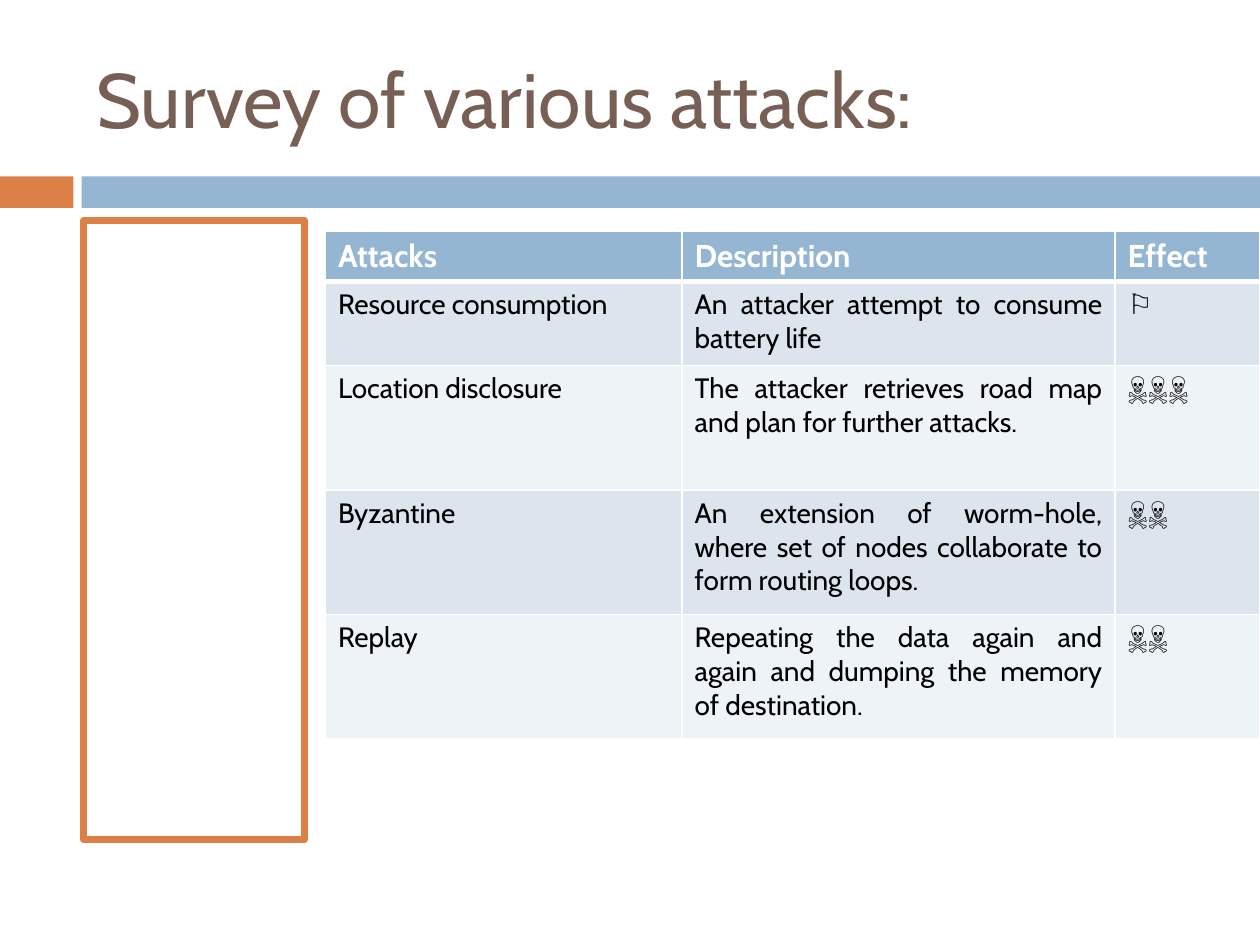
import pptx
import pptx.util
import pptx.dml.color
import pptx.enum.shapes
import pptx.enum.text
import pptx.oxml.ns
import lxml.etree

Pt = pptx.util.Pt
ALIGN = pptx.enum.text.PP_ALIGN
ANCHOR = pptx.enum.text.MSO_ANCHOR

COLORS = {
    "orange": "DD8047",
    "blue": "94B6D2",
    "brown": "775F55",
    "white": "FFFFFF",
    "black": "000000",
    "band_dark": "DCE5EE",
    "band_light": "EEF3F7",
}
TITLE_FORMAT = {"name": "Cabin", "size": Pt(44)}
HEADER_FORMAT = {"name": "Cabin", "size": Pt(18), "bold": True}
BODY_FORMAT = {"name": "Cabin", "size": Pt(16), "bold": False}

COLUMN_WIDTHS = [203.8, 247.4, 82.8]
ROW_HEIGHTS = [27.6, 48, 71.2, 71.2, 71.2]
ATTACKS = [
    ("Attacks", "Description", "Effect"),
    ("Resource consumption", "An attacker attempt to consume battery life", "⚐"),
    ("Location disclosure",
     "The attacker retrieves road map and plan for further attacks.", "☠☠☠"),
    ("Byzantine",
     "An extension of worm-hole, where set of nodes collaborate to form routing loops.",
     "☠☠"),
    ("Replay",
     "Repeating the data again and again and dumping the memory of destination.", "☠☠"),
]


def rgb(color):
    return pptx.dml.color.RGBColor.from_string(COLORS[color])


def write(frame, text, font_format, color, align=ALIGN.LEFT):
    paragraph = frame.paragraphs[0]
    paragraph.alignment = align
    run = paragraph.add_run()
    run.text = text
    for attribute, value in font_format.items():
        setattr(run.font, attribute, value)
    run.font.color.rgb = rgb(color)


def add_rectangle(slide, box, fill, line=None, line_width=0):
    rectangle = slide.shapes.add_shape(
        pptx.enum.shapes.MSO_SHAPE.RECTANGLE, *map(Pt, box))
    rectangle.shadow.inherit = False
    rectangle.fill.solid()
    rectangle.fill.fore_color.rgb = rgb(fill)
    if line:
        rectangle.line.color.rgb = rgb(line)
        rectangle.line.width = Pt(line_width)
    else:
        rectangle.line.fill.background()


def add_divider(slide, box):
    """Short orange block, a gap, then a blue bar to the right edge."""
    left, top, width, height = box
    block, gap = 42, 4.6
    add_rectangle(slide, (left, top, block, height), "orange")
    bar_left = left + block + gap
    add_rectangle(slide, (bar_left, top, left + width - bar_left, height), "blue")


def add_title(slide, box, text):
    title = slide.shapes.add_textbox(*map(Pt, box))
    title.text_frame.word_wrap = True
    title.text_frame.vertical_anchor = ANCHOR.MIDDLE
    write(title.text_frame, text, TITLE_FORMAT, "brown")


def set_borders(cell, widths):
    properties = cell._tc.get_or_add_tcPr()
    qn = pptx.oxml.ns.qn
    for side, width in widths.items():
        border = lxml.etree.SubElement(
            properties, qn(f"a:ln{side}"), w=str(Pt(width)))
        fill = lxml.etree.SubElement(border, qn("a:solidFill"))
        lxml.etree.SubElement(fill, qn("a:srgbClr"), val=COLORS["white"])


def add_attack_table(slide, box):
    table = slide.shapes.add_table(
        len(ROW_HEIGHTS), len(COLUMN_WIDTHS), *map(Pt, box)).table
    for column, width in zip(table.columns, COLUMN_WIDTHS):
        column.width = Pt(width)
    for row, height in zip(table.rows, ROW_HEIGHTS):
        row.height = Pt(height)

    for row_index, attack in enumerate(ATTACKS):
        header = row_index == 0
        band = "band_dark" if row_index % 2 else "band_light"
        for column_index, text in enumerate(attack):
            cell = table.cell(row_index, column_index)
            # Thick rule under the header, thin rules elsewhere
            set_borders(cell, {"L": 1, "R": 1,
                               "T": 3 if row_index == 1 else 1,
                               "B": 3 if header else 1})
            cell.fill.solid()
            cell.fill.fore_color.rgb = rgb("blue" if header else band)
            justified = column_index == 1 and not header
            write(cell.text_frame, text,
                  HEADER_FORMAT if header else BODY_FORMAT,
                  "white" if header else "black",
                  ALIGN.JUSTIFY if justified else ALIGN.LEFT)


def main():
    presentation = pptx.Presentation()
    presentation.slide_width, presentation.slide_height = Pt(720), Pt(540)
    slide = presentation.slides.add_slide(presentation.slide_layouts[6])

    # Heading
    add_divider(slide, (0, 100.8, 720, 18))
    add_title(slide, (48, 21.6, 636, 68.4), "Survey of various attacks:")

    # Empty side panel and table
    add_rectangle(slide, (48, 126, 126, 354), "white", "orange", 4)
    add_attack_table(slide, (186, 132, sum(COLUMN_WIDTHS), sum(ROW_HEIGHTS)))

    presentation.save("out.pptx")


if __name__ == "__main__":
    main()
